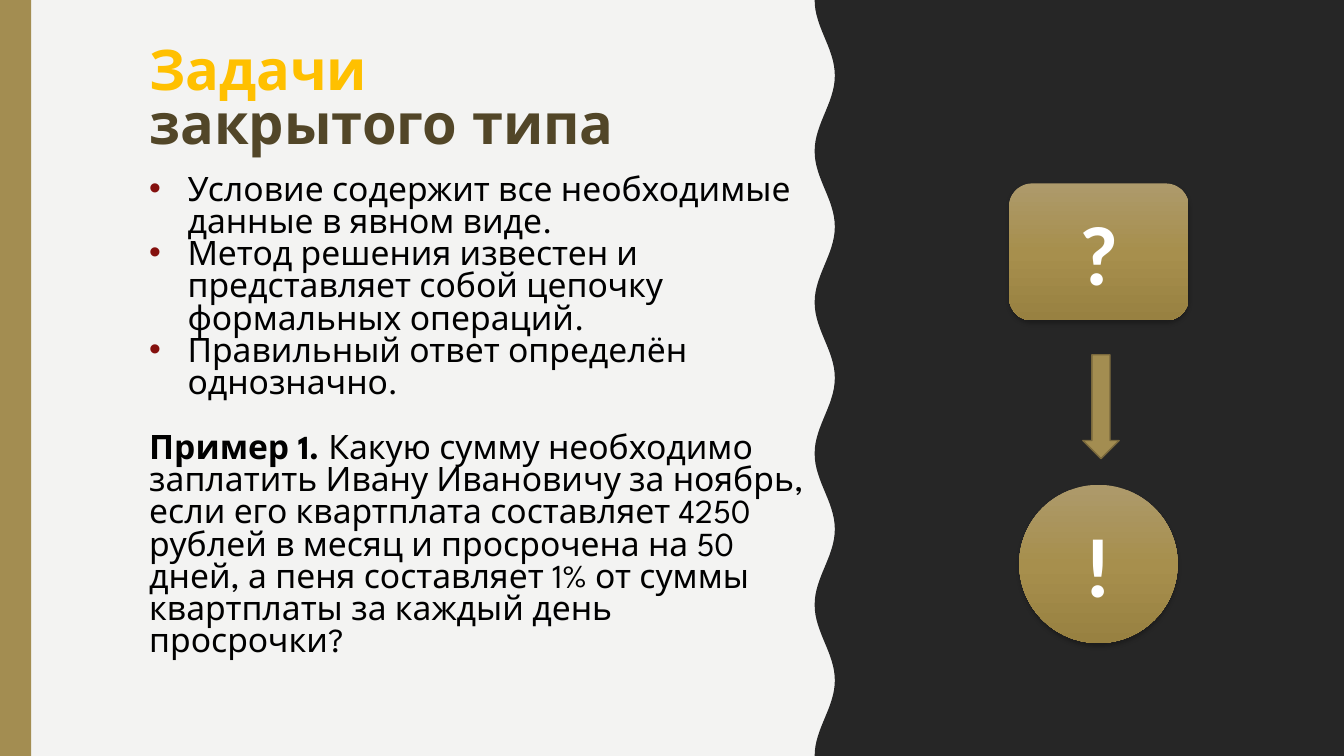
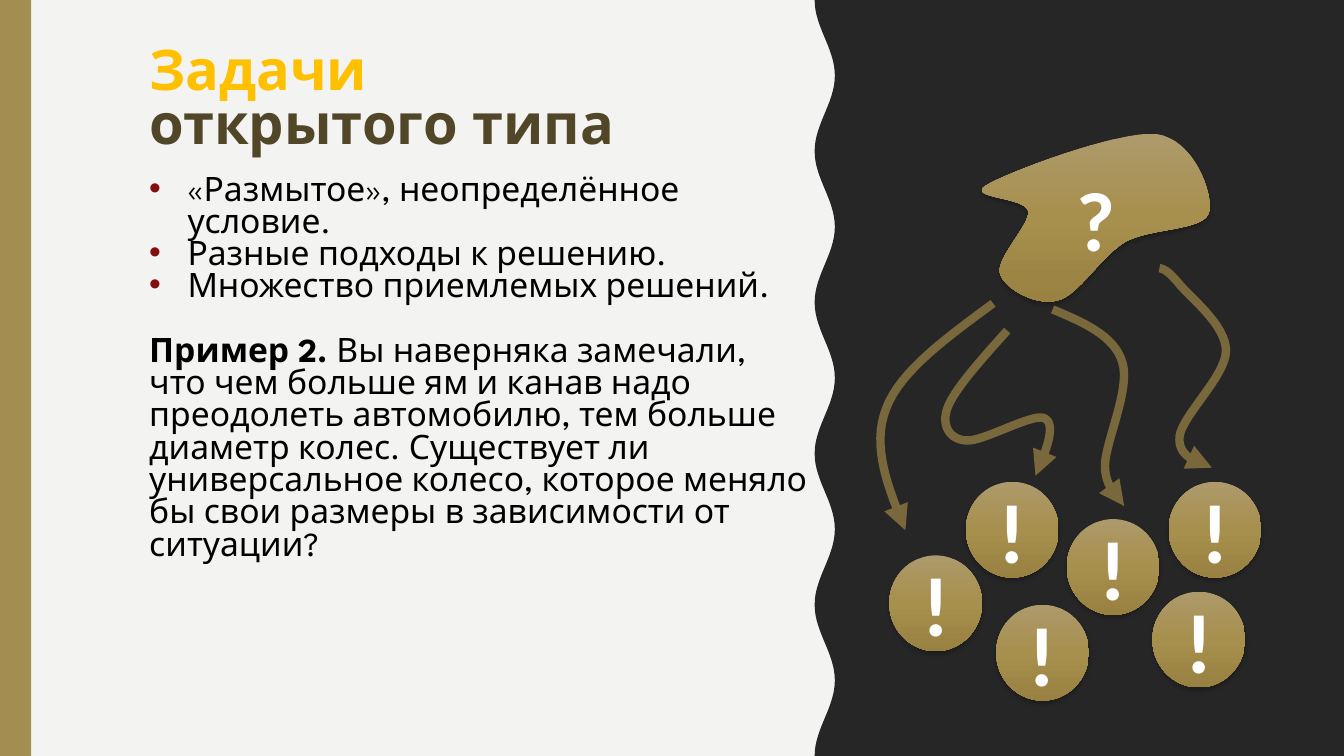
from itertools import chain
from math import cos, pi

from lxml.etree import SubElement
from pptx import Presentation
from pptx.dml.color import RGBColor
from pptx.enum.shapes import MSO_SHAPE
from pptx.enum.text import MSO_ANCHOR, MSO_AUTO_SIZE, PP_ALIGN
from pptx.oxml.ns import qn
from pptx.util import Pt

PX = 9144  # 100 px to the inch
SLIDE_WIDTH, SLIDE_HEIGHT = 1333, 750
BODY_FONT = "League Spartan"
SYMBOL_FONT = "Calibri"
COLORS = {
    "background": "F3F3F2",
    "panel": "262626",
    "gold": "A38D51",
    "dark_gold": "79683C",
    "title_accent": "FFC000",
    "title": "524628",
    "text": "000000",
    "bullet": "84100E",
    "symbol": "FFFFFF",
    "shadow": "000000",
}
GOLD_GRADIENT = [(0, "AD9A6B"), (50, "A78F4D"), (100, "988141")]

CLOSED_POINTS = [
    "Условие содержит все необходимые данные в явном виде.",
    "Метод решения известен и представляет собой цепочку формальных операций.",
    "Правильный ответ определён однозначно.",
]
CLOSED_EXAMPLE = (
    "Какую сумму необходимо заплатить Ивану Ивановичу за ноябрь, если его "
    "квартплата составляет 4250 рублей в месяц и просрочена на 50 дней, а пеня "
    "составляет 1% от суммы квартплаты за каждый день просрочки?"
)
OPEN_POINTS = [
    "«Размытое», неопределённое условие.",
    "Разные подходы к решению.",
    "Множество приемлемых решений.",
]
OPEN_EXAMPLE = (
    "Вы наверняка замечали, что чем больше ям и канав надо преодолеть автомобилю, "
    "тем больше диаметр колес. Существует ли универсальное колесо, которое меняло бы "
    "свои размеры в зависимости от ситуации?"
)

# Curves: a start point, then two control points and an end point per segment.
BLOB = [
    (978, 184), (999, 171), (1111, 129), (1147, 133),
    (1184, 138), (1204, 193), (1199, 211),
    (1194, 229), (1141, 226), (1116, 240),
    (1091, 255), (1070, 293), (1049, 298),
    (1028, 304), (997, 287), (992, 272),
    (987, 257), (1021, 224), (1020, 210),
    (1018, 195), (957, 197), (978, 184),
]
ARROWS = [
    [(985, 301), (939, 335), (893, 368), (879, 405),
     (864, 443), (881, 484), (898, 526)],
    [(1150, 266), (1154, 267), (1158, 268), (1169, 281),
     (1180, 295), (1216, 322), (1216, 348),
     (1216, 373), (1172, 413), (1170, 433),
     (1168, 452), (1185, 458), (1202, 464)],
    [(1044, 307), (1075, 320), (1105, 333), (1113, 359),
     (1122, 385), (1096, 439), (1096, 462),
     (1096, 485), (1110, 492), (1113, 498),
     (1117, 505), (1116, 503), (1115, 502)],
    [(999, 328), (973, 357), (947, 386), (940, 404),
     (933, 422), (942, 436), (958, 437),
     (974, 439), (1025, 409), (1036, 415),
     (1048, 421), (1038, 446), (1027, 472)],
]
ANSWERS = [(882, 551), (988, 600), (1058, 515), (958, 478), (1143, 587), (1159, 478)]


def color(name):
    return RGBColor.from_string(COLORS[name])


def place(shape, left, top, width, height):
    shape.left, shape.top, shape.width, shape.height = (
        value * PX for value in (left, top, width, height)
    )


def add_run(paragraph, text, size=24, fill="text", bold=False, font=BODY_FONT):
    run = paragraph.add_run()
    run.text = text
    run.font.name = font
    run.font.size = Pt(size)
    run.font.bold = bold
    run.font.color.rgb = color(fill)


def add_preset(slide, kind, left, top, width, height):
    box = (value * PX for value in (left, top, width, height))
    shape = slide.shapes.add_shape(kind, *box)
    shape.shadow.inherit = False
    return shape


def add_outline(slide, points, close=True):
    vertices = [(x * PX, y * PX) for x, y in points]
    builder = slide.shapes.build_freeform(*vertices[0], scale=1.0)
    builder.add_line_segments(vertices[1:], close=close)
    shape = builder.convert_to_shape()
    shape.shadow.inherit = False
    return shape


def curve_points(curve, steps=16):
    """Sample a chain of cubic Bézier segments."""
    points = [curve[0]]
    for first in range(0, len(curve) - 1, 3):
        segment = curve[first:first + 4]
        for step in range(1, steps + 1):
            t = step / steps
            weights = ((1 - t) ** 3, 3 * t * (1 - t) ** 2, 3 * t * t * (1 - t), t ** 3)
            points.append(tuple(
                sum(weight * value for weight, value in zip(weights, axis))
                for axis in zip(*segment)
            ))
    return points


def fill_plain(shape, fill):
    shape.fill.solid()
    shape.fill.fore_color.rgb = color(fill)
    shape.line.fill.background()


def style_symbol(shape, symbol):
    """Give a shape the gold gradient, a soft shadow and one large symbol."""
    shape.fill.gradient()
    shape.fill.gradient_angle = 270
    properties = shape._element.spPr
    stops = properties.find(qn("a:gradFill")).find(qn("a:gsLst"))
    for stop in list(stops):
        stops.remove(stop)
    for position, value in GOLD_GRADIENT:
        stop = SubElement(stops, qn("a:gs"), pos=str(position * 1000))
        SubElement(stop, qn("a:srgbClr"), val=value)
    shape.line.fill.background()

    shadow = SubElement(
        properties.find(qn("a:effectLst")), qn("a:outerShdw"),
        blurRad=str(Pt(3)), dist=str(Pt(2)), dir="5400000", rotWithShape="0",
    )
    shadow_color = SubElement(shadow, qn("a:srgbClr"), val=COLORS["shadow"])
    SubElement(shadow_color, qn("a:alpha"), val="25000")

    frame = shape.text_frame
    frame.vertical_anchor = MSO_ANCHOR.MIDDLE
    paragraph = frame.paragraphs[0]
    paragraph.alignment = PP_ALIGN.CENTER
    add_run(paragraph, symbol, size=60, fill="symbol", bold=True, font=SYMBOL_FONT)


def add_curved_arrow(slide, curve):
    arrow = add_outline(slide, curve_points(curve), close=False)
    arrow.fill.background()
    arrow.line.color.rgb = color("dark_gold")
    arrow.line.width = Pt(6)
    SubElement(arrow._element.spPr.find(qn("a:ln")), qn("a:tailEnd"), type="triangle")


def add_decoration(slide):
    """Put the wavy dark panel and the gold band behind the text."""
    wave = [
        (818 - 10 * cos(2 * pi * y / 150), y) for y in range(SLIDE_HEIGHT, -1, -5)
    ]
    panel = add_outline(slide, chain([(SLIDE_WIDTH, 0), (SLIDE_WIDTH, SLIDE_HEIGHT)], wave))
    fill_plain(panel, "panel")
    band = add_preset(slide, MSO_SHAPE.RECTANGLE, 0, 0, 31, SLIDE_HEIGHT)
    fill_plain(band, "gold")
    for shape in (band, panel):
        slide.shapes._spTree.insert(2, shape._element)


def prepare_frame(placeholder):
    frame = placeholder.text_frame
    frame.word_wrap = True
    frame.vertical_anchor = MSO_ANCHOR.TOP
    frame.auto_size = MSO_AUTO_SIZE.SHAPE_TO_FIT_TEXT
    return frame


def format_paragraph(paragraph, space_before=0):
    paragraph.alignment = PP_ALIGN.LEFT
    paragraph.line_spacing = 0.8
    paragraph.space_before = Pt(space_before)


def set_bullet(paragraph, indent=38):
    """Hang the paragraph on a bullet, or remove the bullet if indent is 0."""
    properties = paragraph._p.get_or_add_pPr()
    properties.set("marL", str(indent * PX))
    properties.set("indent", str(-indent * PX))
    if not indent:
        SubElement(properties, qn("a:buNone"))
        return
    bullet_color = SubElement(properties, qn("a:buClr"))
    SubElement(bullet_color, qn("a:srgbClr"), val=COLORS["bullet"])
    SubElement(properties, qn("a:buFont"), typeface="Arial")
    SubElement(properties, qn("a:buChar"), char="•")


def fill_title(title, kind):
    place(title, 138, 42, 650, 118)
    paragraph = prepare_frame(title).paragraphs[0]
    format_paragraph(paragraph)
    add_run(paragraph, "Задачи ", size=40, fill="title_accent", bold=True)
    paragraph.add_line_break()
    add_run(paragraph, kind, size=40, fill="title", bold=True)


def fill_body(body, height, points, label, example):
    place(body, 138, 169, 674, height)
    frame = prepare_frame(body)
    for index, point in enumerate(points):
        paragraph = frame.add_paragraph() if index else frame.paragraphs[0]
        format_paragraph(paragraph)
        set_bullet(paragraph)
        add_run(paragraph, point)
    paragraph = frame.add_paragraph()
    format_paragraph(paragraph, space_before=23)
    set_bullet(paragraph, indent=0)
    add_run(paragraph, label, bold=True)
    add_run(paragraph, example)


def add_task_slide(presentation, kind, height, points, label, example):
    slide = presentation.slides.add_slide(presentation.slide_layouts[1])
    add_decoration(slide)
    fill_title(slide.shapes.title, kind)
    fill_body(slide.placeholders[1], height, points, label, example)
    return slide


def draw_closed_task(slide):
    question = add_preset(slide, MSO_SHAPE.ROUNDED_RECTANGLE, 1001, 182, 178, 136)
    style_symbol(question, "?")
    answer = add_preset(slide, MSO_SHAPE.OVAL, 1011, 481, 157, 157)
    style_symbol(answer, "!")
    arrow = add_preset(slide, MSO_SHAPE.DOWN_ARROW, 1074, 352, 36, 103)
    fill_plain(arrow, "gold")
    arrow.line.color.rgb = color("dark_gold")
    arrow.line.width = Pt(1)


def draw_open_task(slide):
    style_symbol(add_outline(slide, curve_points(BLOB)), "?")
    for left, top in ANSWERS:
        style_symbol(add_preset(slide, MSO_SHAPE.OVAL, left, top, 92, 95), "!")
    for curve in ARROWS:
        add_curved_arrow(slide, curve)


def main():
    presentation = Presentation()
    presentation.slide_width = SLIDE_WIDTH * PX
    presentation.slide_height = SLIDE_HEIGHT * PX
    background = presentation.slide_master.background.fill
    background.solid()
    background.fore_color.rgb = color("background")

    draw_closed_task(add_task_slide(
        presentation, "закрытого типа", 527, CLOSED_POINTS, "Пример 1. ", CLOSED_EXAMPLE))
    draw_open_task(add_task_slide(
        presentation, "открытого типа", 430, OPEN_POINTS, "Пример 2. ", OPEN_EXAMPLE))
    presentation.save("out.pptx")


if __name__ == "__main__":
    main()
